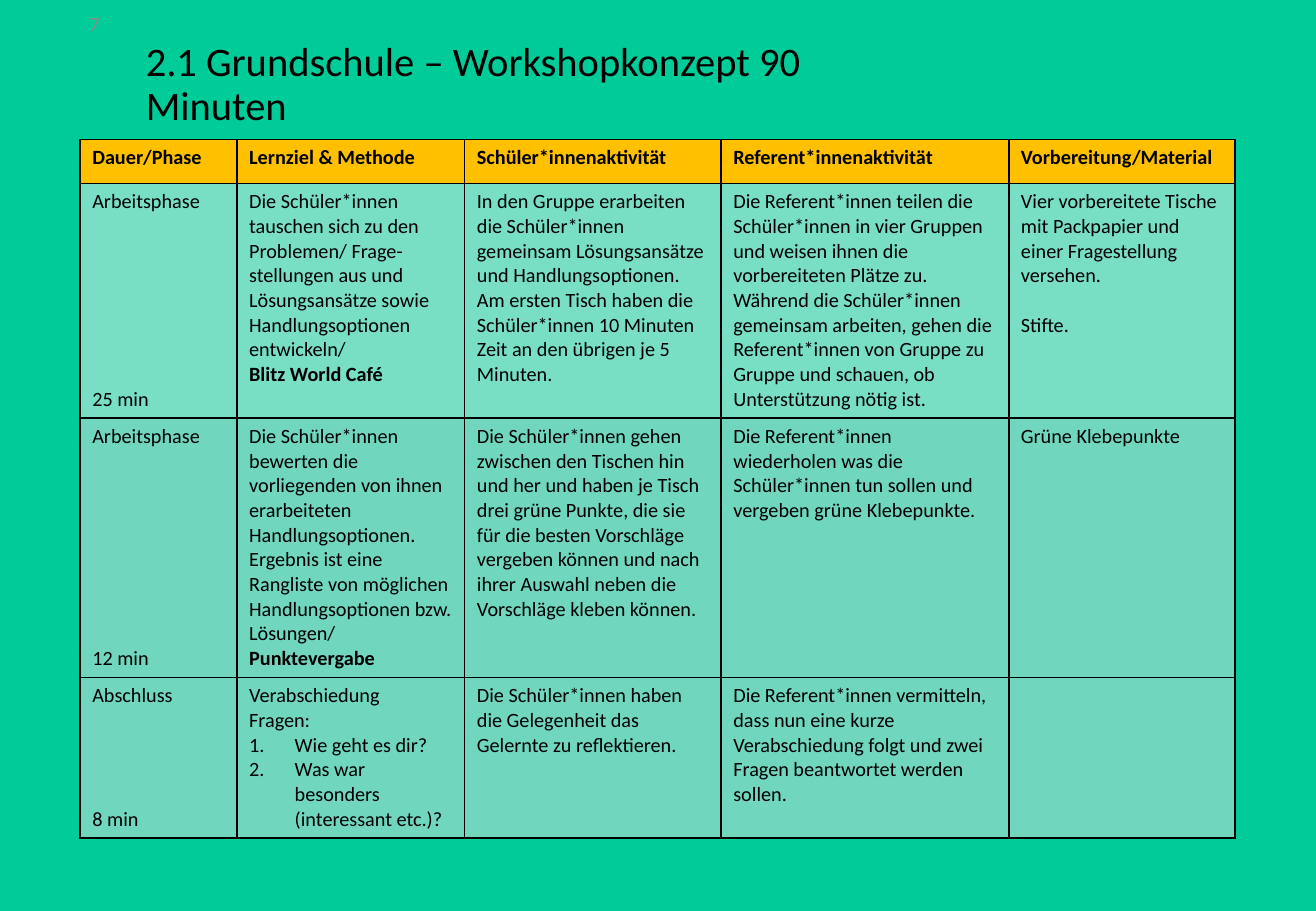
from dataclasses import dataclass
from typing import Any, NamedTuple

from lxml import etree
from pptx import Presentation
from pptx.dml.color import RGBColor
from pptx.enum.text import MSO_ANCHOR, MSO_AUTO_SIZE, PP_ALIGN
from pptx.oxml.ns import qn
from pptx.util import Pt

CENTER = PP_ALIGN.CENTER
LEFT = PP_ALIGN.LEFT
MIDDLE = MSO_ANCHOR.MIDDLE
TOP = MSO_ANCHOR.TOP
NO_FIT = MSO_AUTO_SIZE.NONE


@dataclass(frozen=True)
class Theme:
    back: str = "00CC99"
    head: str = "FFC000"
    light: str = "F0F0F0"
    dark: str = "E1E1E1"
    ink: str = "000000"
    grey: str = "8C8C8C"
    font: str = "Calibri"
    title: float = 24
    body: float = 12
    line: float = 14.65  # height of one body line


class Para(NamedTuple):
    text: str
    bold: bool = False
    gap: int = 0  # free lines above
    count: bool = False  # numbered item


class Row(NamedTuple):
    height: float
    fill: str
    alpha: int
    cells: list[list[Para]]


class Box(NamedTuple):
    left: float
    top: float
    width: float
    height: float

    def points(self) -> list[Pt]:
        return [Pt(side) for side in self]


THEME = Theme()
TITLE = Box(79.2, 25.9, 488.2, 49)
NUMBER = Box(-31.7, -0.7, 175.7, 28.8)
GRID = Box(47.5, 82.8, 684.5, 412.5)
WIDTHS = [93, 135, 152, 170.5, 134]

HEADS = ["Dauer/Phase", "Lernziel & Methode", "Schüler*innenaktivität",
         "Referent*innenaktivität", "Vorbereitung/Material"]

ROWS = [
    Row(26, THEME.head, 100, [[Para(head, bold=True)] for head in HEADS]),
    Row(138.9, THEME.light, 50, [
        [Para("Arbeitsphase"), Para("25 min", gap=7)],
        [Para("Die Schüler*innen tauschen sich zu den Problemen/ Frage-stellungen aus und "
              "Lösungsansätze sowie Handlungsoptionen entwickeln/"),
         Para("Blitz World Café", bold=True)],
        [Para("In den Gruppe erarbeiten die Schüler*innen gemeinsam Lösungsansätze und "
              "Handlungsoptionen. Am ersten Tisch haben die Schüler*innen 10 Minuten Zeit "
              "an den übrigen je 5 Minuten.")],
        [Para("Die Referent*innen teilen die Schüler*innen in vier Gruppen und weisen ihnen "
              "die vorbereiteten Plätze zu. Während die Schüler*innen gemeinsam arbeiten, "
              "gehen die Referent*innen von Gruppe zu Gruppe und schauen, ob Unterstützung "
              "nötig ist.")],
        [Para("Vier vorbereitete Tische mit Packpapier und einer Fragestellung versehen."),
         Para("Stifte.", gap=1)],
    ]),
    Row(153.5, THEME.dark, 50, [
        [Para("Arbeitsphase"), Para("12 min", gap=8)],
        [Para("Die Schüler*innen bewerten die vorliegenden von ihnen erarbeiteten "
              "Handlungsoptionen. Ergebnis ist eine Rangliste von möglichen "
              "Handlungsoptionen bzw. Lösungen/"),
         Para("Punktevergabe", bold=True)],
        [Para("Die Schüler*innen gehen zwischen den Tischen hin und her und haben je Tisch "
              "drei grüne Punkte, die sie für die besten Vorschläge vergeben können und "
              "nach ihrer Auswahl neben die Vorschläge kleben können.")],
        [Para("Die Referent*innen wiederholen was die Schüler*innen tun sollen und "
              "vergeben grüne Klebepunkte.")],
        [Para("Grüne Klebepunkte")],
    ]),
    Row(95, THEME.dark, 50, [
        [Para("Abschluss"), Para("8 min", gap=4)],
        [Para("Verabschiedung"), Para("Fragen:"),
         Para("Wie geht es dir?", count=True),
         Para("Was war besonders (interessant etc.)?", count=True)],
        [Para("Die Schüler*innen haben die Gelegenheit das Gelernte zu reflektieren.")],
        [Para("Die Referent*innen vermitteln, dass nun eine kurze Verabschiedung folgt und "
              "zwei Fragen beantwortet werden sollen.")],
        [],
    ]),
]


def apply(target: Any, values: dict[str, Any]) -> None:
    for name, value in values.items():
        setattr(target, name, value)


def style(para: Any, size: float, ink: str = THEME.ink, bold: bool = False) -> None:
    apply(para.font, {"name": THEME.font, "size": Pt(size), "bold": bold})
    para.font.color.rgb = RGBColor.from_string(ink)


def number(para: Any) -> None:
    """Turn a paragraph into a numbered item with a hanging indent."""
    props = para._p.get_or_add_pPr()
    props.set("marL", str(Pt(27)))
    props.set("indent", str(-Pt(27)))
    etree.SubElement(props, qn("a:buAutoNum"), type="arabicPeriod")


def border(cell: Any) -> None:
    props = cell._tc.get_or_add_tcPr()
    for index, side in enumerate("LRTB"):
        line = etree.Element(qn(f"a:ln{side}"), w=str(Pt(1)))
        fill = etree.SubElement(line, qn("a:solidFill"))
        etree.SubElement(fill, qn("a:srgbClr"), val=THEME.ink)
        props.insert(index, line)


def paint(cell: Any, fill: str, alpha: int) -> None:
    cell.fill.solid()
    cell.fill.fore_color.rgb = RGBColor.from_string(fill)
    if alpha < 100:
        color = cell._tc.tcPr.find(".//" + qn("a:srgbClr"))
        etree.SubElement(color, qn("a:alpha"), val=str(alpha * 1000))


def write(cell: Any, paras: list[Para]) -> None:
    frame = cell.text_frame
    for index, item in enumerate(paras):
        para = frame.add_paragraph() if index else frame.paragraphs[0]
        para.text = item.text
        if item.gap:
            para.space_before = Pt(item.gap * THEME.line)
        if item.count:
            number(para)
        style(para, THEME.body, bold=item.bold)


def add_grid(slide: Any) -> None:
    table = slide.shapes.add_table(len(ROWS), len(WIDTHS), *GRID.points()).table
    apply(table, {"first_row": False, "horz_banding": False})
    for column, width in zip(table.columns, WIDTHS):
        column.width = Pt(width)
    for line, row in zip(table.rows, ROWS):
        line.height = Pt(row.height)
        for cell, paras in zip(line.cells, row.cells):
            paint(cell, row.fill, row.alpha)
            border(cell)
            write(cell, paras)


def add_title(slide: Any) -> None:
    title = slide.shapes.title
    apply(title, dict(zip(Box._fields, TITLE.points())))
    title.text = "2.1 Grundschule – Workshopkonzept 90 Minuten"
    apply(title.text_frame, {"word_wrap": True, "auto_size": NO_FIT,
                             "vertical_anchor": MIDDLE})
    para = title.text_frame.paragraphs[0]
    apply(para, {"alignment": LEFT, "line_spacing": 0.9})
    style(para, THEME.title)


def add_number(slide: Any) -> None:
    frame = slide.shapes.add_textbox(*NUMBER.points()).text_frame
    apply(frame, {"text": "7", "word_wrap": True, "vertical_anchor": MIDDLE})
    para = frame.paragraphs[0]
    para.alignment = CENTER
    style(para, THEME.body, THEME.grey)


def main() -> None:
    deck = Presentation()
    apply(deck, {"slide_width": Pt(780), "slide_height": Pt(540)})
    slide = deck.slides.add_slide(deck.slide_layouts[5])
    slide.background.fill.solid()
    slide.background.fill.fore_color.rgb = RGBColor.from_string(THEME.back)
    add_grid(slide)
    add_number(slide)
    add_title(slide)
    deck.save("out.pptx")


if __name__ == "__main__":
    main()
